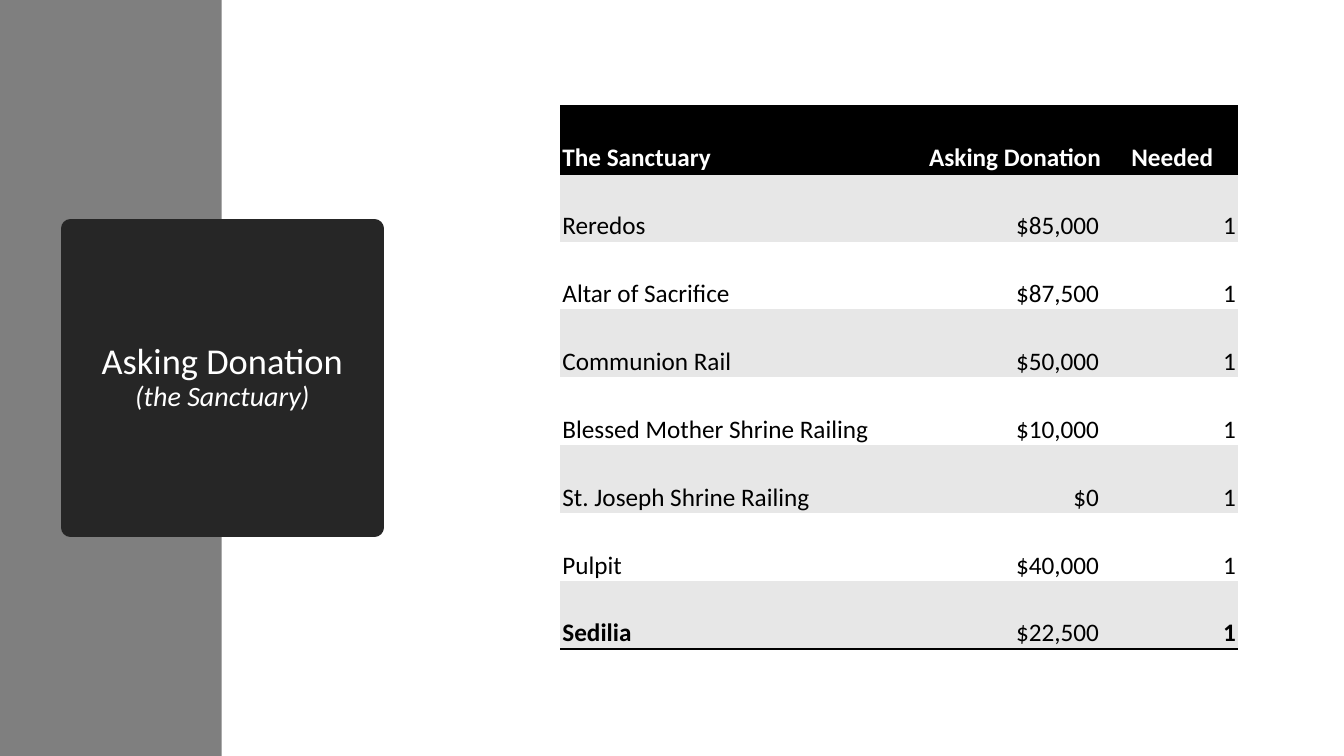
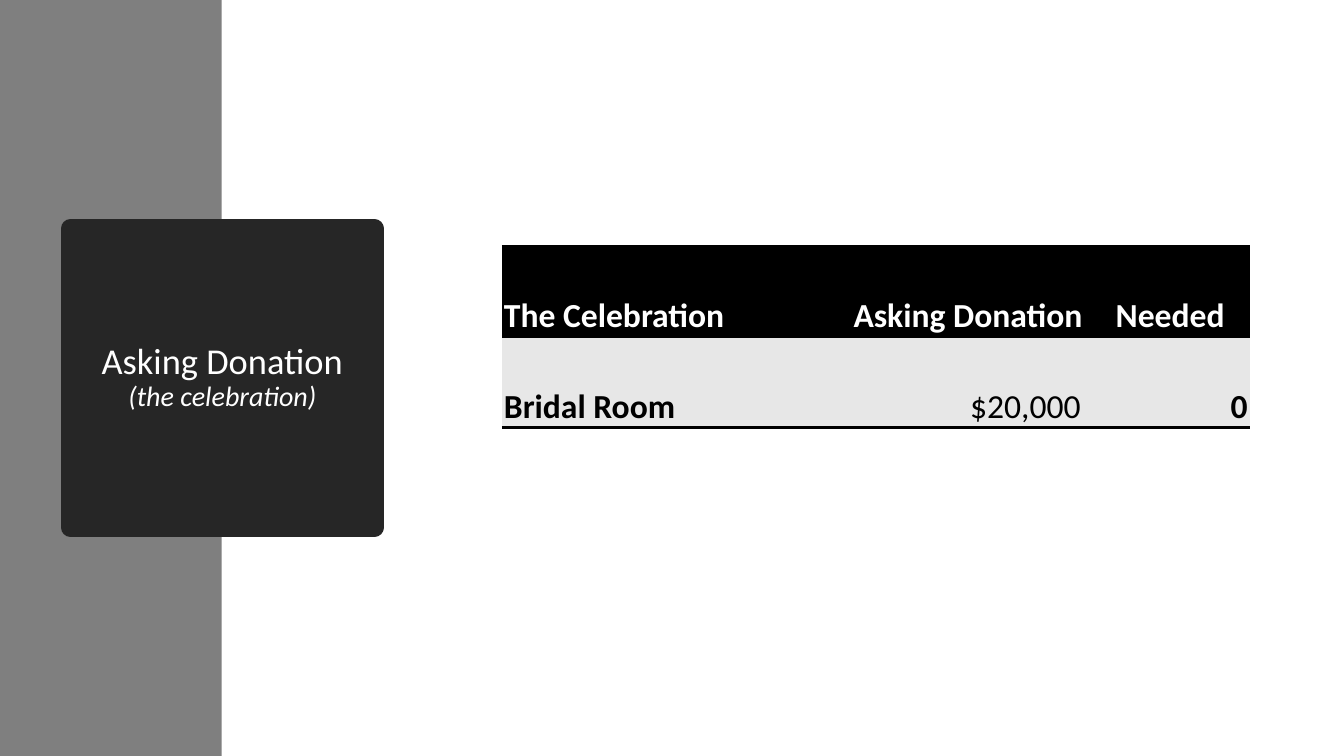
from dataclasses import dataclass

from lxml.etree import SubElement
from pptx import Presentation
from pptx.dml.color import RGBColor
from pptx.enum.shapes import MSO_SHAPE as Shape
from pptx.enum.text import MSO_ANCHOR as Anchor, PP_ALIGN as Align
from pptx.oxml import parse_xml
from pptx.oxml.ns import nsdecls, qn
from pptx.util import Emu, Inches, Pt

WIDTH, HEIGHT = Inches(13.33), Inches(7.5)
FONT = "Calibri"
HUES = {
    "page": "FFFFFF",
    "band": "7F7F7F",
    "card": "262626",
    "head": "000000",
    "stripe": "E7E7E7",
    "ink": "000000",
    "light": "FFFFFF",
}
PLAIN = "{2D5ABB26-0587-4C30-8999-92F81FD0307C}"
PAD = Inches(0.02)
RULE = Pt(2)
ALIGNS = (Align.LEFT, Align.RIGHT, Align.RIGHT)
HEAD_ALIGNS = (Align.LEFT, Align.CENTER, Align.CENTER)


@dataclass(frozen=True)
class Item:
    name: str
    price: str
    count: str

    def texts(self) -> tuple[str, str, str]:
        return self.name, self.price, self.count


@dataclass(frozen=True)
class Page:
    """Places, column widths and row height are percent of the slide."""
    note: str
    title: str
    left: float
    top: float
    cols: tuple[float, float, float]
    row: float
    size: int
    items: tuple[Item, ...]


PAGES = (
    Page("(the Sanctuary)", "The Sanctuary", 41.7, 14, (27, 13.65, 9.75), 8.98, 18, (
        Item("Reredos", "$85,000", "1"),
        Item("Altar of Sacrifice", "$87,500", "1"),
        Item("Communion Rail", "$50,000", "1"),
        Item("Blessed Mother Shrine Railing", "$10,000", "1"),
        Item("St. Joseph Shrine Railing", "$0", "1"),
        Item("Pulpit", "$40,000", "1"),
        Item("Sedilia", "$22,500", "1"),
    )),
    Page("(the celebration)", "The Celebration", 37.35, 32.53, (25.57, 18.22, 11.85), 12, 24, (
        Item("Bridal Room", "$20,000", "0"),
    )),
)


def wide(share: float) -> Emu:
    return Emu(int(WIDTH * share / 100))


def tall(share: float) -> Emu:
    return Emu(int(HEIGHT * share / 100))


def hue(name: str) -> RGBColor:
    return RGBColor.from_string(HUES[name])


def paint(part, name: str) -> None:
    part.fill.solid()
    part.fill.fore_color.rgb = hue(name)


def add_run(para, text: str, size: int, tone: str, bold=False, slant=False) -> None:
    run = para.add_run()
    run.text = text
    font = run.font
    font.name, font.size = FONT, Pt(size)
    font.bold, font.italic = bold, slant
    font.color.rgb = hue(tone)


def add_block(slide, box: tuple[float, float, float, float], tone: str):
    left, top, width, height = box
    block = slide.shapes.add_shape(
        Shape.RECTANGLE, wide(left), tall(top), wide(width), tall(height))
    block.shadow.inherit = False
    paint(block, tone)
    block.line.fill.background()
    return block


def add_card(slide, note: str) -> None:
    """Title card whose thick, round-joined outline softens the corners."""
    card = add_block(slide, (5.25, 30.25, 22.6, 39.5), "card")
    paint(card.line, "card")
    card.line.width = Pt(13.75)
    SubElement(card.line._get_or_add_ln(), qn("a:round"))
    frame = card.text_frame
    frame.word_wrap = True
    frame.vertical_anchor = Anchor.MIDDLE
    para = frame.paragraphs[0]
    para.alignment, para.line_spacing = Align.CENTER, 0.9
    add_run(para, "Asking Donation", 26, "light")
    para.add_line_break()
    add_run(para, note, 20, "light", slant=True)


def add_rules(cell, edges: str) -> None:
    """Draw black borders on the edges named by letter, T before B."""
    props = cell._tc.get_or_add_tcPr()
    for edge in reversed(edges):
        props.insert(0, parse_xml(
            f'<a:ln{edge} {nsdecls("a")} w="{RULE}"><a:solidFill>'
            f'<a:srgbClr val="{HUES["ink"]}"/></a:solidFill></a:ln{edge}>'))


def fill_cell(cell, text: str, align, size: int, fill: str, tone: str, bold: bool) -> None:
    paint(cell, fill)
    cell.vertical_anchor = Anchor.BOTTOM
    cell.margin_left = cell.margin_right = cell.margin_top = PAD
    cell.margin_bottom = 0
    para = cell.text_frame.paragraphs[0]
    para.alignment = align
    add_run(para, text, size, tone, bold)


def add_grid(slide, page: Page) -> None:
    rows = [("FFFFFF" and page.title, "Asking Donation", "Needed")]
    rows = [(page.title, "Asking Donation", "Needed")]
    rows += [item.texts() for item in page.items]
    last = len(rows) - 1
    grid = slide.shapes.add_table(
        len(rows), len(page.cols), wide(page.left), tall(page.top),
        wide(sum(page.cols)), tall(page.row * len(rows))).table
    grid._tbl.tblPr.find(qn("a:tableStyleId")).text = PLAIN
    for col, share in zip(grid.columns, page.cols):
        col.width = wide(share)
    for y, texts in enumerate(rows):
        grid.rows[y].height = tall(page.row)
        head = y == 0
        fill = "head" if head else "stripe" if y % 2 else "page"
        tone = "light" if head else "ink"
        edges = "TB" if head else "B" if y == last else ""
        for x, text in enumerate(texts):
            cell = grid.cell(y, x)
            align = (HEAD_ALIGNS if head else ALIGNS)[x]
            bold = head or (y == last and x != 1)
            fill_cell(cell, text, align, page.size, fill, tone, bold)
            if x == 1 and not head:
                cell.margin_right = PAD + Pt(page.size * 0.23)
            add_rules(cell, edges)


def add_page(deck, page: Page) -> None:
    slide = deck.slides.add_slide(deck.slide_layouts[6])
    paint(slide.background, "page")
    add_block(slide, (0, 0, 16.5, 100), "band")
    add_card(slide, page.note)
    add_grid(slide, page)


def main() -> None:
    deck = Presentation()
    deck.slide_width, deck.slide_height = WIDTH, HEIGHT
    for page in PAGES:
        add_page(deck, page)
    deck.save("out.pptx")


if __name__ == "__main__":
    main()
